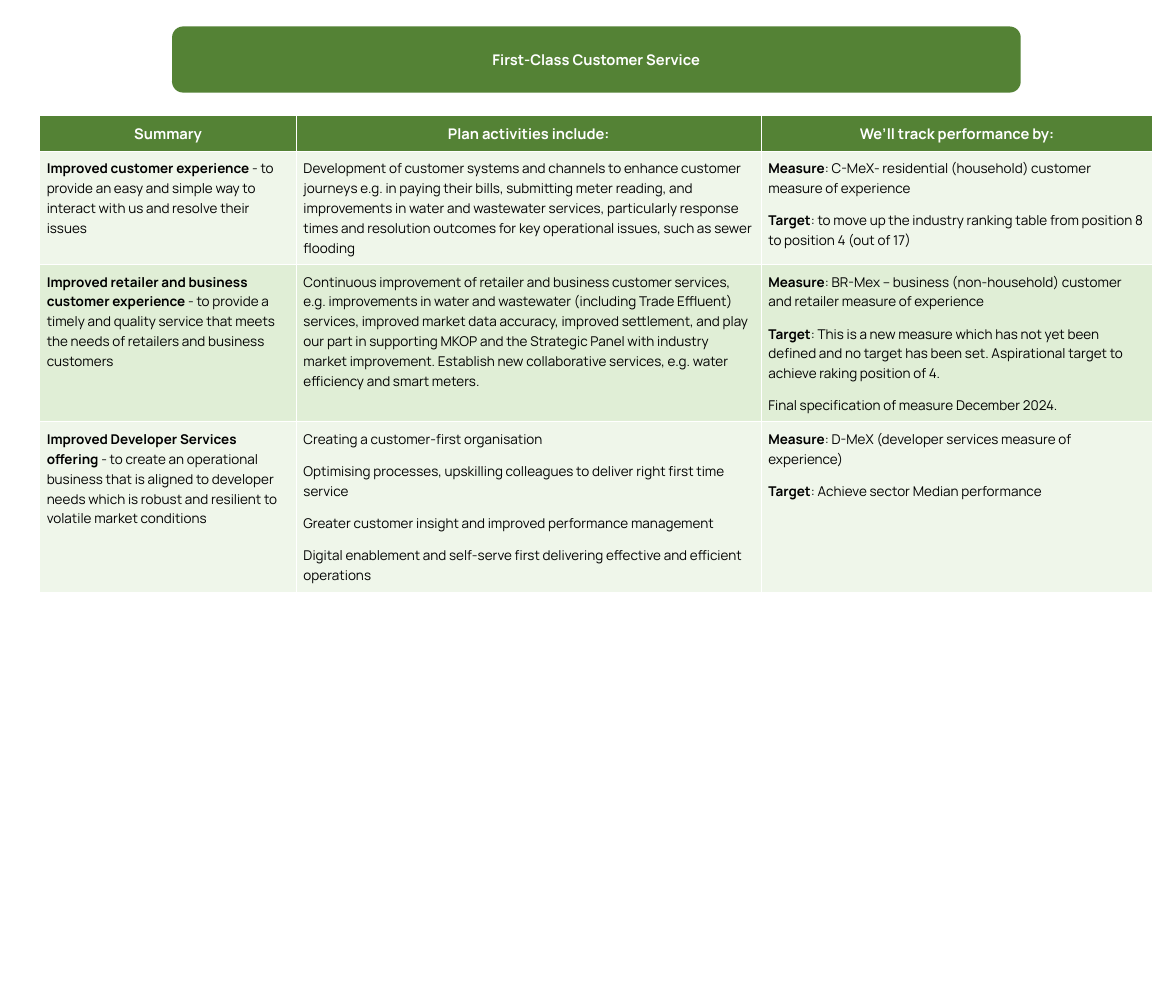
from dataclasses import dataclass
from typing import NamedTuple

from pptx import Presentation
from pptx.dml.color import RGBColor as RGB
from pptx.enum.shapes import MSO_SHAPE as Shape
from pptx.enum.text import MSO_ANCHOR as Anchor, PP_ALIGN as Align
from pptx.slide import Slide
from pptx.table import _Cell as Cell
from pptx.text.text import TextFrame
from pptx.util import Inches, Pt


@dataclass(frozen=True)
class Theme:
    font: str = "Manrope"
    green: RGB = RGB(0x54, 0x82, 0x35)
    bands: tuple[RGB, RGB] = (RGB(0xEF, 0xF6, 0xEA), RGB(0xE0, 0xEE, 0xD6))
    white: RGB = RGB(0xFF, 0xFF, 0xFF)
    black: RGB = RGB(0, 0, 0)
    heading: int = 12
    body: int = 11
    line_spacing: float = 1.07


class Passage(NamedTuple):
    """A paragraph with an optional bold opening."""
    text: str
    lead: str = ""


class Service(NamedTuple):
    summary: Passage
    activities: list[Passage]
    tracking: list[Passage]


THEME = Theme()
COLUMN_WIDTHS = (2.91, 5.27, 4.44)
ROW_HEIGHTS = (0.36, 1.14, 1.61, 1.94)
HEADINGS = ("Summary", "Plan activities include:", "We’ll track performance by:")
SUMMARY_GAP, DETAIL_GAP = 8, 10

SERVICES = [
    Service(
        Passage(" - to provide an easy and simple way to interact with us and resolve "
                "their issues", "Improved customer experience"),
        [Passage("Development of customer systems and channels to enhance customer "
                 "journeys e.g. in paying their bills, submitting meter reading, and "
                 "improvements in water and wastewater services, particularly response "
                 "times and resolution outcomes for key operational issues, such as "
                 "sewer flooding")],
        [Passage(": C-MeX- residential (household) customer measure of experience",
                 "Measure"),
         Passage(": to move up the industry ranking table from position 8 to position 4 "
                 "(out of 17)", "Target")],
    ),
    Service(
        Passage(" - to provide a timely and quality service that meets the needs of "
                "retailers and business customers",
                "Improved retailer and business customer experience"),
        [Passage("Continuous improvement of retailer and business customer services, "
                 "e.g. improvements in water and wastewater (including Trade Effluent) "
                 "services, improved market data accuracy, improved settlement, and play "
                 "our part in supporting MKOP and the Strategic Panel with industry "
                 "market improvement. Establish new collaborative services, e.g. water "
                 "efficiency and smart meters.")],
        [Passage(": BR-Mex – business (non-household) customer and retailer measure of "
                 "experience", "Measure"),
         Passage(": This is a new measure which has not yet been defined and no target "
                 "has been set. Aspirational target to achieve raking position of 4.",
                 "Target"),
         Passage("Final specification of measure December 2024.")],
    ),
    Service(
        Passage(" - to create an operational business that is aligned to developer needs "
                "which is robust and resilient to volatile market conditions",
                "Improved Developer Services offering"),
        [Passage("Creating a customer-first organisation"),
         Passage("Optimising processes, upskilling colleagues to deliver right first "
                 "time service"),
         Passage("Greater customer insight and improved performance management"),
         Passage("Digital enablement and self-serve first delivering effective and "
                 "efficient operations")],
        [Passage(": D-MeX (developer services measure of experience)", "Measure"),
         Passage(": Achieve sector Median performance", "Target")],
    ),
]


def write(frame: TextFrame, text: str, *, lead: str = "", size: int = THEME.body,
          color: RGB = THEME.black, bold: bool = False, align: Align = Align.LEFT,
          gap: int = 0, spacing: float = THEME.line_spacing) -> None:
    """Fill the frame's empty first paragraph, or add one after its text."""
    paragraph = frame.add_paragraph() if frame.text else frame.paragraphs[0]
    paragraph.alignment = align
    paragraph.line_spacing = spacing
    paragraph.space_after = Pt(gap)
    for words, strong in ((lead, True), (text, bold)):
        if words:
            run = paragraph.add_run()
            run.text = words
            run.font.name = THEME.font
            run.font.size = Pt(size)
            run.font.bold = strong
            run.font.color.rgb = color


def style_cell(cell: Cell, fill: RGB, anchor: Anchor = Anchor.TOP) -> None:
    cell.fill.solid()
    cell.fill.fore_color.rgb = fill
    cell.vertical_anchor = anchor
    cell.margin_left = cell.margin_right = Inches(0.08)
    cell.margin_top = cell.margin_bottom = Inches(0.08)


def add_banner(slide: Slide, title: str) -> None:
    banner = slide.shapes.add_shape(Shape.ROUNDED_RECTANGLE, Inches(1.95), Inches(0.3),
                                    Inches(9.62), Inches(0.75))
    banner.shadow.inherit = False
    banner.fill.solid()
    banner.fill.fore_color.rgb = THEME.green
    banner.line.fill.background()
    banner.text_frame.vertical_anchor = Anchor.MIDDLE
    write(banner.text_frame, title, size=THEME.heading, color=THEME.white, bold=True,
          align=Align.CENTER, spacing=1.0)


def add_plan(slide: Slide, services: list[Service]) -> None:
    plan = slide.shapes.add_table(
        len(services) + 1, len(HEADINGS), Inches(0.45), Inches(1.31),
        Inches(sum(COLUMN_WIDTHS)), Inches(sum(ROW_HEIGHTS))).table
    for column, width in zip(plan.columns, COLUMN_WIDTHS):
        column.width = Inches(width)
    for row, height in zip(plan.rows, ROW_HEIGHTS):
        row.height = Inches(height)

    for index, heading in enumerate(HEADINGS):
        cell = plan.cell(0, index)
        style_cell(cell, THEME.green, Anchor.MIDDLE)
        write(cell.text_frame, heading, size=THEME.heading, color=THEME.white,
              bold=True, align=Align.CENTER, gap=SUMMARY_GAP)

    for number, service in enumerate(services):
        columns = (([service.summary], SUMMARY_GAP), (service.activities, DETAIL_GAP),
                   (service.tracking, DETAIL_GAP))
        for index, (passages, gap) in enumerate(columns):
            cell = plan.cell(number + 1, index)
            style_cell(cell, THEME.bands[number % 2])
            for passage in passages:
                write(cell.text_frame, passage.text, lead=passage.lead, gap=gap)


def main() -> None:
    deck = Presentation()
    deck.slide_width, deck.slide_height = Inches(13.33), Inches(11.42)
    slide = deck.slides.add_slide(deck.slide_layouts[6])
    add_plan(slide, SERVICES)
    add_banner(slide, "First-Class Customer Service")
    deck.save("out.pptx")


if __name__ == "__main__":
    main()
